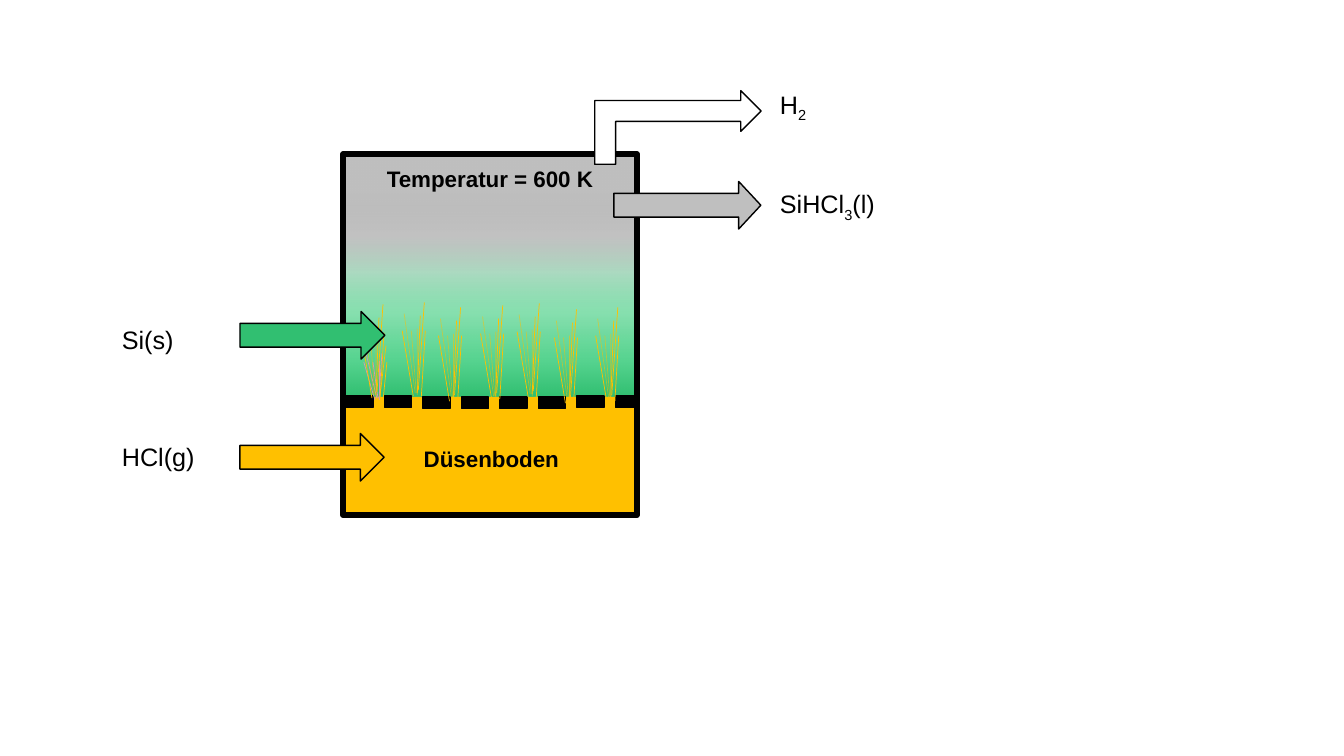
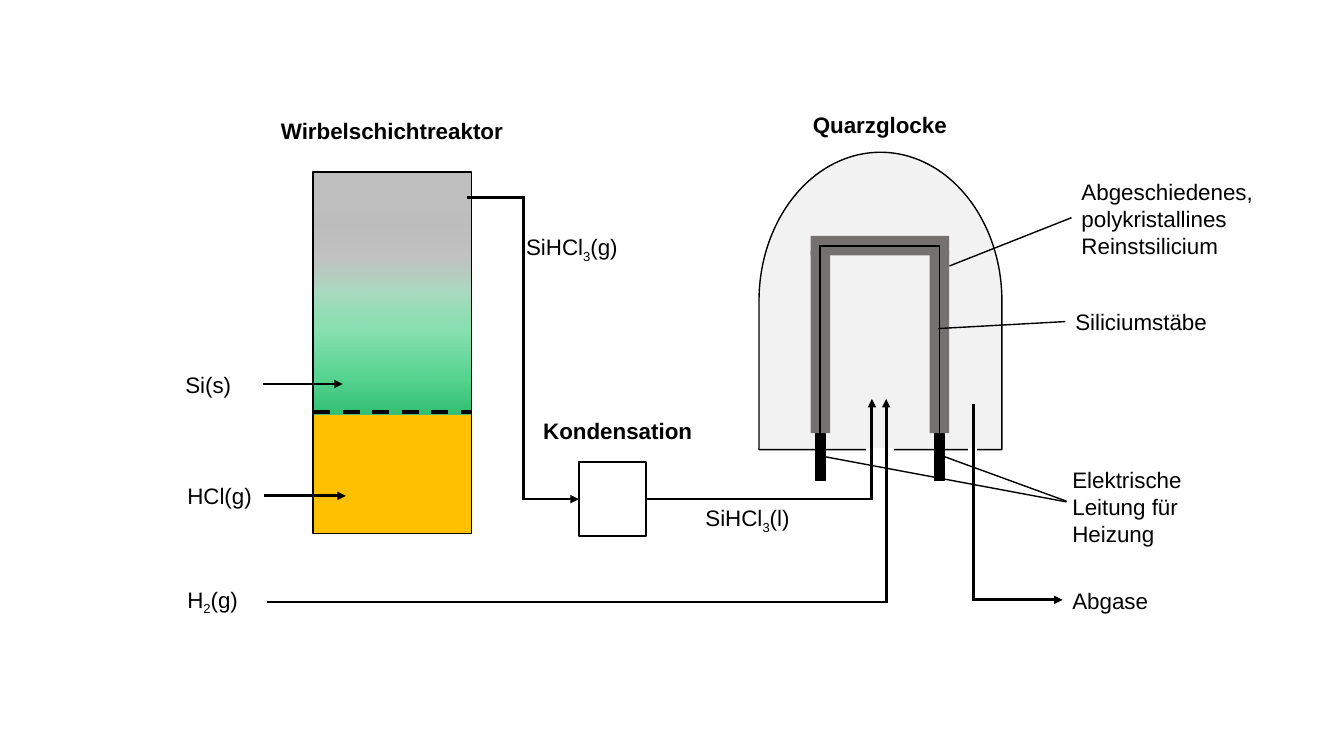
from pptx import Presentation
from pptx.dml.color import RGBColor
from pptx.enum.dml import MSO_LINE
from pptx.enum.shapes import MSO_CONNECTOR, MSO_SHAPE
from pptx.enum.text import MSO_ANCHOR, PP_ALIGN
from pptx.oxml.ns import qn
from pptx.util import Pt
from lxml import etree

RECT, BELL = MSO_SHAPE.RECTANGLE, MSO_SHAPE.FLOWCHART_DELAY
ARROW, BENT = MSO_SHAPE.RIGHT_ARROW, MSO_SHAPE.BENT_UP_ARROW
STRAIGHT, DASH = MSO_CONNECTOR.STRAIGHT, MSO_LINE.DASH
LEFT, MID = PP_ALIGN.LEFT, PP_ALIGN.CENTER

FONT = "Arial"
BLACK, WHITE, GOLD, GREEN = "000000", "FFFFFF", "FFC000", "31BF71"
GREY, DARK, PALE, PINK = "BFBFBF", "767171", "F2F2F2", "D599B4"
# Position, colour and opacity, in percent
BED = [(16, GREY, 100), (34, "A6A6A6", 68), (49, "A0D5B8", 87),
       (65, "53D38D", 69), (85, "57D490", 100), (100, GREEN, 100)]
TANK_H, BED_H = 258, 173

# Foot, tip, opacity and whether the strand always stays gold
STRANDS = [((0, 0), (-7.9, -46.8), 100, False),
           ((5.8, 0), (8.6, -46.8), 100, True),
           ((2.2, -2.2), (-1.4, -46.8), 52, False),
           ((2.9, -0.7), (2.9, -48.2), 52, False),
           ((2.9, -2.2), (5, -57.6), 100, False),
           ((1.4, -2.2), (-6.5, -59), 52, False),
           ((3.6, -4.3), (7.9, -67), 100, True)]
JETS = [(265.7, 284.4), (295.2, 283), (321.1, 286.6), (351.2, 285.1),
        (377.3, 283.7), (403.9, 288), (433.4, 286.6)]


def rgb(ink):
    return RGBColor.from_string(ink)


def put(item, **values):
    for name, value in values.items():
        setattr(item, name, value)


def fade(colour, part):
    """Give a colour element an opacity in percent."""
    if part < 100:
        etree.SubElement(colour, qn("a:alpha")).set("val", str(part * 1000))


def box(slide, x, y, w, h, fill=None, ink=None, wide=1, kind=RECT, adj=(), spin=0):
    shape = slide.shapes.add_shape(kind, Pt(x), Pt(y), Pt(w), Pt(h))
    shape.shadow.inherit = False
    shape.rotation = spin
    for i, value in enumerate(adj):
        shape.adjustments[i] = value
    if fill:
        shape.fill.solid()
        shape.fill.fore_color.rgb = rgb(fill)
    else:
        shape.fill.background()
    if ink:
        shape.line.color.rgb = rgb(ink)
        shape.line.width = Pt(wide)
    else:
        shape.line.fill.background()
    return shape


def blend(shape, stops):
    """Fill a shape with a gradient from top to bottom."""
    shape.fill.gradient()
    shape.fill.gradient_angle = 270
    steps = shape._element.spPr.find(qn("a:gradFill")).find(qn("a:gsLst"))
    for old in list(steps):
        steps.remove(old)
    for place, ink, part in stops:
        stop = etree.SubElement(steps, qn("a:gs"))
        stop.set("pos", str(place * 1000))
        colour = etree.SubElement(stop, qn("a:srgbClr"))
        colour.set("val", ink)
        fade(colour, part)


def text(slide, x, y, w, words, size=16, bold=False, align=LEFT, h=26.6):
    """Write words; every second piece between bars is a subscript."""
    frame = slide.shapes.add_textbox(Pt(x), Pt(y), Pt(w), Pt(h)).text_frame
    put(frame, word_wrap=True, vertical_anchor=MSO_ANCHOR.MIDDLE)
    para = frame.paragraphs[0]
    para.alignment = align
    for i, piece in enumerate(words.split("|")):
        run = para.add_run()
        run.text = piece
        put(run.font, name=FONT, size=Pt(size), bold=bold)
        run.font.color.rgb = rgb(BLACK)
        if i % 2:
            run._r.get_or_add_rPr().set("baseline", "-25000")


def head(slide, x, y, w, words):
    text(slide, x, y, w, words, bold=True, align=MID)


def line(slide, start, end, ink=BLACK, wide=1, part=100, tip=False, dash=None):
    link = slide.shapes.add_connector(STRAIGHT, *map(Pt, (*start, *end)))
    link.line.color.rgb = rgb(ink)
    put(link.line, width=Pt(wide), dash_style=dash)
    props = link._element.spPr
    edge = props.find(qn("a:ln"))
    fade(next(edge.iter(qn("a:srgbClr"))), part)
    if tip:
        etree.SubElement(edge, qn("a:tailEnd")).set("type", "triangle")
    etree.SubElement(props, qn("a:effectLst"))
    return link


def pipe(slide, *stops):
    """Draw a bent arrow through the stops and return its legs."""
    legs = []
    for i in range(1, len(stops)):
        leg = line(slide, stops[i - 1], stops[i], wide=2, tip=i == len(stops) - 1)
        leg._element.spPr.find(qn("a:ln")).set("cap", "sq")
        legs.append(leg)
    return legs


def tank(slide, x, y, w, wide):
    box(slide, x, y + BED_H, w, TANK_H - BED_H, GOLD)
    blend(box(slide, x, y, w, BED_H), BED)
    box(slide, x, y, w, TANK_H, ink=BLACK, wide=wide)


def jet(slide, x, y, grow=1, ink=GOLD):
    for (fx, fy), (tx, ty), part, gold in STRANDS:
        line(slide, (x + fx, y + fy * grow), (x + tx, y + ty * grow),
             GOLD if gold else ink, 0.5, part if ink == GOLD else 100)


def draw_bed(slide):
    tank(slide, 245, 110, 210, 4)
    for i in range(8):
        drop = 0.7 if 2 <= i <= 5 else 0
        box(slide, 247 + 27.5 * i, 283 + drop, 17.3 if i == 7 else 19.4, 8,
            BLACK, BLACK)
    jet(slide, 267.8, 285.8, 0.58, PINK)
    for x, y in JETS:
        jet(slide, x, y)

    for x, y, w, fill, adj in [(171.4, 309.6, 103, GOLD, 0.5),
                               (171.4, 222.5, 103.5, GREEN, 0.5),
                               (438.5, 129.6, 105, GREY, 0.465)]:
        box(slide, x, y, w, 34, fill, BLACK, kind=ARROW, adj=(0.5, adj))
    vent = box(slide, 457.9, 31.7, 52.6, 118.8, WHITE, BLACK, kind=BENT,
               adj=(0.284, 0.276, 0.276), spin=270)
    vent._element.spPr.find(qn("a:xfrm")).set("flipV", "1")

    head(slide, 245.5, 114.5, 209, "Temperatur = 600 K")
    head(slide, 247, 314, 208, "Düsenboden")
    for x, y, words in [(80, 227.8, "Si(s)"), (80, 311.8, "HCl(g)"),
                        (550, 61.5, "H|2"), (550, 132.5, "SiHCl|3|(l)")]:
        text(slide, x, y, 100, words, 18, h=29)


def draw_bell(slide):
    box(slide, 522.7, 128.2, 212.4, 173.5, PALE, BLACK, kind=BELL, spin=270)
    box(slide, 619.2, 320.4, 18.7, 14.4, WHITE, WHITE)
    box(slide, 691.9, 320.4, 5.8, 13, WHITE, WHITE)
    for x in (586, 671):
        box(slide, x - 3.2, 309.6, 6.4, 33.8, BLACK, BLACK)
        box(slide, x - 7, 179, 14, 130.5, DARK)
    box(slide, 579, 168.5, 99, 14, DARK)
    for start, end in [((586, 314), (586, 175)), ((671, 314), (671, 175)),
                       ((586, 175.5), (671, 175.5))]:
        line(slide, start, end, wide=1.25)


def draw_plant(slide):
    tank(slide, 223.5, 123, 113.5, 1)
    line(slide, (224, 294.5), (337, 294.5), wide=3, dash=DASH)
    draw_bell(slide)
    cooler = box(slide, 413.5, 330, 48, 53, ink=BLACK)

    pipe(slide, (189.4, 354.2), (247, 354.2))
    pipe(slide, (188.6, 274.3), (244.8, 274.3))
    feed = pipe(slide, (334.5, 141), (374, 141), (374, 356.5), (413.5, 356.5))
    feed[-1].end_connect(cooler, 1)
    flow = pipe(slide, (461.5, 356.5), (622.8, 356.5), (622.8, 285))
    flow[0].begin_connect(cooler, 3)
    pipe(slide, (191.5, 430), (633, 430), (633, 285))
    pipe(slide, (695.5, 289.5), (695.5, 428.5), (759, 428.5))

    for start, end in [((674.6, 326.2), (761.8, 358)), ((589, 326.2), (761.8, 358.5)),
                       ((678.2, 190), (765.4, 155.5)), ((670.3, 234.7), (761, 229.7))]:
        line(slide, start, end)

    for x, y, w, words in [(191.5, 80, 177, "Wirbelschichtreaktor"),
                           (546.5, 75.6, 164, "Quarzglocke"),
                           (363.5, 294.5, 155.5, "Kondensation")]:
        head(slide, x, y, w, words)
    for x, y, w, words in [(125.3, 261.4, 63, "Si(s)"), (126.7, 340.6, 63, "HCl(g)"),
                           (126.7, 416.2, 65, "H|2|(g)"), (368.7, 164.2, 85, "SiHCl|3|(g)"),
                           (496.8, 357.8, 85, "SiHCl|3|(l)"), (758.9, 415.4, 81, "Abgase"),
                           (761, 216.7, 137.5, "Siliciumstäbe")]:
        text(slide, x, y, w, words)
    for x, y, words in [(758.9, 329, "Elektrische Leitung für Heizung"),
                        (765.4, 123.1, "Abgeschiedenes, polykristallines Reinstsilicium")]:
        text(slide, x, y, 137.5, words, h=65.5)


def main():
    deck = Presentation()
    put(deck, slide_width=Pt(960), slide_height=Pt(540))
    for draw in (draw_bed, draw_plant):
        draw(deck.slides.add_slide(deck.slide_layouts[6]))
    deck.save("out.pptx")


if __name__ == "__main__":
    main()
